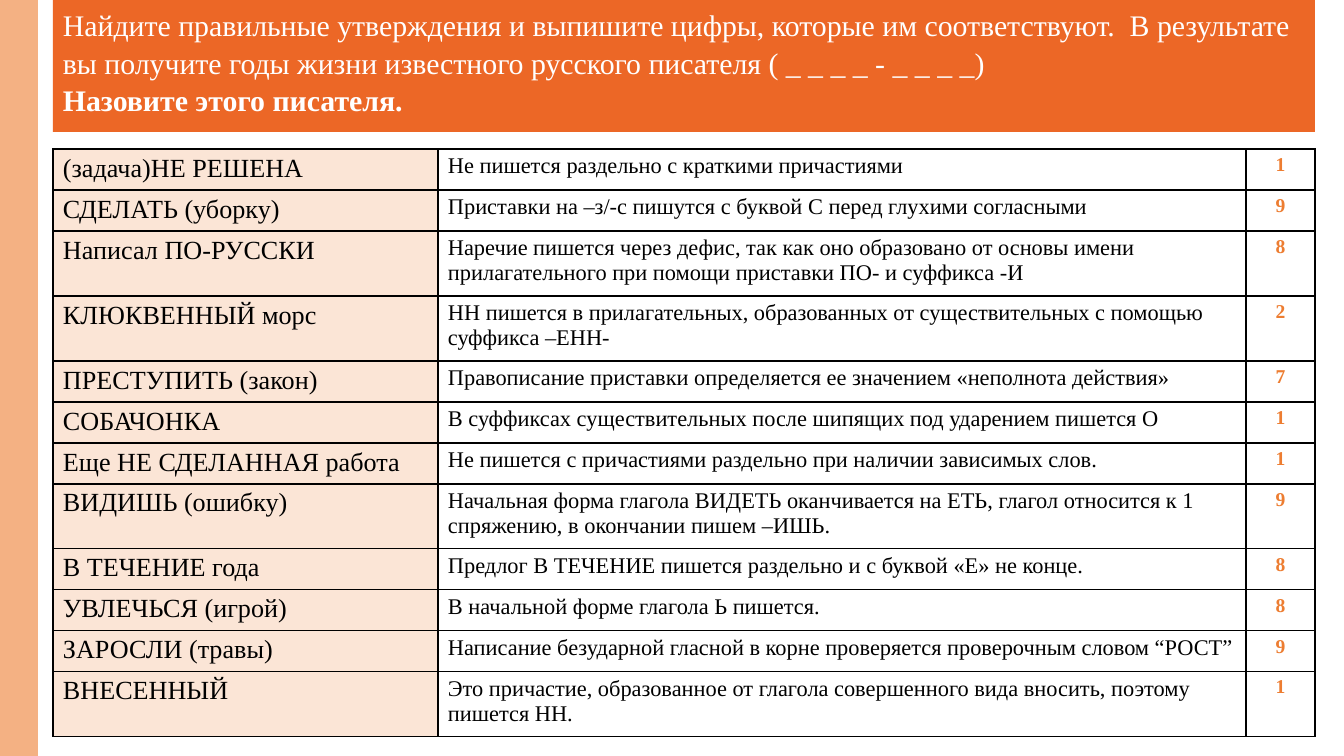
from lxml import etree
from pptx import Presentation
from pptx import util as u
from pptx.dml.color import RGBColor
from pptx.enum import shapes, text
from pptx.oxml.ns import qn

PX = 9144000 / 1344
WHITE = RGBColor(0xFF, 0xFF, 0xFF)
BLACK = RGBColor(0x00, 0x00, 0x00)
ORANGE = RGBColor(0xEC, 0x67, 0x26)
DIGIT = RGBColor(0xED, 0x7D, 0x31)
PEACH = RGBColor(0xFB, 0xE5, 0xD6)
STRIP = RGBColor(0xF4, 0xB1, 0x83)
LEFT, CENTER = text.PP_ALIGN.LEFT, text.PP_ALIGN.CENTER


def box(*lengths):
    return [u.Emu(round(length * PX)) for length in lengths]


def write(paragraph, words, alignment, **font_format):
    paragraph.alignment = alignment
    run = paragraph.add_run()
    run.text = words
    run.font.color.rgb = font_format.pop("color")
    for name, value in font_format.items():
        setattr(run.font, name, value)


presentation = Presentation()
presentation.slide_width, presentation.slide_height = box(1344, 756)
slide = presentation.slides.add_slide(presentation.slide_layouts[6])

# Heading banner and the side strip, which is turned upright
panels = []
for place, color, rotation in [((53, 0, 1262, 132), ORANGE, 0),
                               ((-359, 359, 756, 38), STRIP, 270)]:
    shape = slide.shapes.add_shape(shapes.MSO_SHAPE.RECTANGLE, *box(*place))
    shape.rotation = rotation
    shape.shadow.inherit = False
    shape.fill.solid()
    shape.fill.fore_color.rgb = color
    shape.line.fill.background()
    panels.append(shape)

# Heading text
frame = panels[0].text_frame
margins = dict(zip(("margin_left", "margin_top", "margin_right", "margin_bottom"),
                   box(10, 5, 10, 5)))
frame_format = {"word_wrap": True, "vertical_anchor": text.MSO_ANCHOR.TOP, **margins}
for name, value in frame_format.items():
    setattr(frame, name, value)
heading = [
    ("Найдите правильные утверждения и выпишите цифры, которые им соответствуют.  "
     "В результате вы получите годы жизни известного русского писателя "
     "( _ _ _ _ - _ _ _ _)", False),
    ("Назовите этого писателя.", True),
]
for index, (words, bold) in enumerate(heading):
    paragraph = frame.add_paragraph() if index else frame.paragraphs[0]
    paragraph.line_spacing = 1.05
    write(paragraph, words, LEFT, name="Times New Roman", size=u.Pt(16),
          bold=bold, color=WHITE)

# Statements: example, rule, digit, lines taken by the rule
statements = [
    ("(задача)НЕ РЕШЕНА", "Не пишется раздельно с краткими причастиями", "1", 1),
    ("СДЕЛАТЬ (уборку)",
     "Приставки на –з/-с пишутся с буквой С перед глухими согласными", "9", 1),
    ("Написал ПО-РУССКИ",
     "Наречие пишется через дефис, так как оно образовано от основы имени "
     "прилагательного при помощи приставки ПО- и суффикса -И", "8", 2),
    ("КЛЮКВЕННЫЙ морс",
     "НН пишется в прилагательных, образованных от существительных с помощью "
     "суффикса –ЕНН-", "2", 2),
    ("ПРЕСТУПИТЬ (закон)",
     "Правописание приставки определяется ее значением «неполнота действия»", "7", 1),
    ("СОБАЧОНКА",
     "В суффиксах существительных после шипящих под ударением пишется О", "1", 1),
    ("Еще НЕ СДЕЛАННАЯ работа",
     "Не пишется с причастиями раздельно при наличии зависимых слов.", "1", 1),
    ("ВИДИШЬ (ошибку)",
     "Начальная форма глагола ВИДЕТЬ оканчивается на ЕТЬ, глагол относится к 1 "
     "спряжению, в окончании пишем –ИШЬ.", "9", 2),
    ("В ТЕЧЕНИЕ года",
     "Предлог В ТЕЧЕНИЕ пишется раздельно и с буквой «Е» не конце.", "8", 1),
    ("УВЛЕЧЬСЯ (игрой)", "В начальной форме глагола Ь пишется.", "8", 1),
    ("ЗАРОСЛИ (травы)",
     "Написание безударной гласной в корне проверяется проверочным словом “РОСТ”",
     "9", 1),
    ("ВНЕСЕННЫЙ",
     "Это причастие, образованное от глагола совершенного вида вносить, поэтому "
     "пишется НН.", "1", 2),
]
row_heights = {1: 41, 2: 65}
# Column width, fill, alignment, font size, bold, colour
columns = [
    (385, PEACH, LEFT, 14, False, BLACK),
    (808, None, LEFT, 12, False, BLACK),
    (69, None, CENTER, 10.5, True, DIGIT),
]

# Table
table = slide.shapes.add_table(len(statements), len(columns),
                               *box(53, 149, 1262, 588)).table
table.first_row = table.horz_banding = False
for column, (width, *_) in zip(table.columns, columns):
    column.width = box(width)[0]

for row, (*cell_texts, line_count) in zip(table.rows, statements):
    row.height = box(row_heights[line_count])[0]
    for cell, words, column_format in zip(row.cells, cell_texts, columns):
        _, fill, alignment, size, bold, color = column_format
        for name, value in margins.items():
            setattr(cell, name, value)
        write(cell.text_frame.paragraphs[0], words, alignment,
              name="Times New Roman", size=u.Pt(size), bold=bold, color=color)

        # Borders come before the fill in the cell properties
        properties = cell._tc.get_or_add_tcPr()
        for side in ("a:lnL", "a:lnR", "a:lnT", "a:lnB"):
            border = etree.SubElement(properties, qn(side), w=str(u.Pt(1)))
            solid = etree.SubElement(border, qn("a:solidFill"))
            etree.SubElement(solid, qn("a:srgbClr"), val=str(BLACK))
        if fill:
            cell.fill.solid()
            cell.fill.fore_color.rgb = fill
        else:
            cell.fill.background()

presentation.save("out.pptx")
